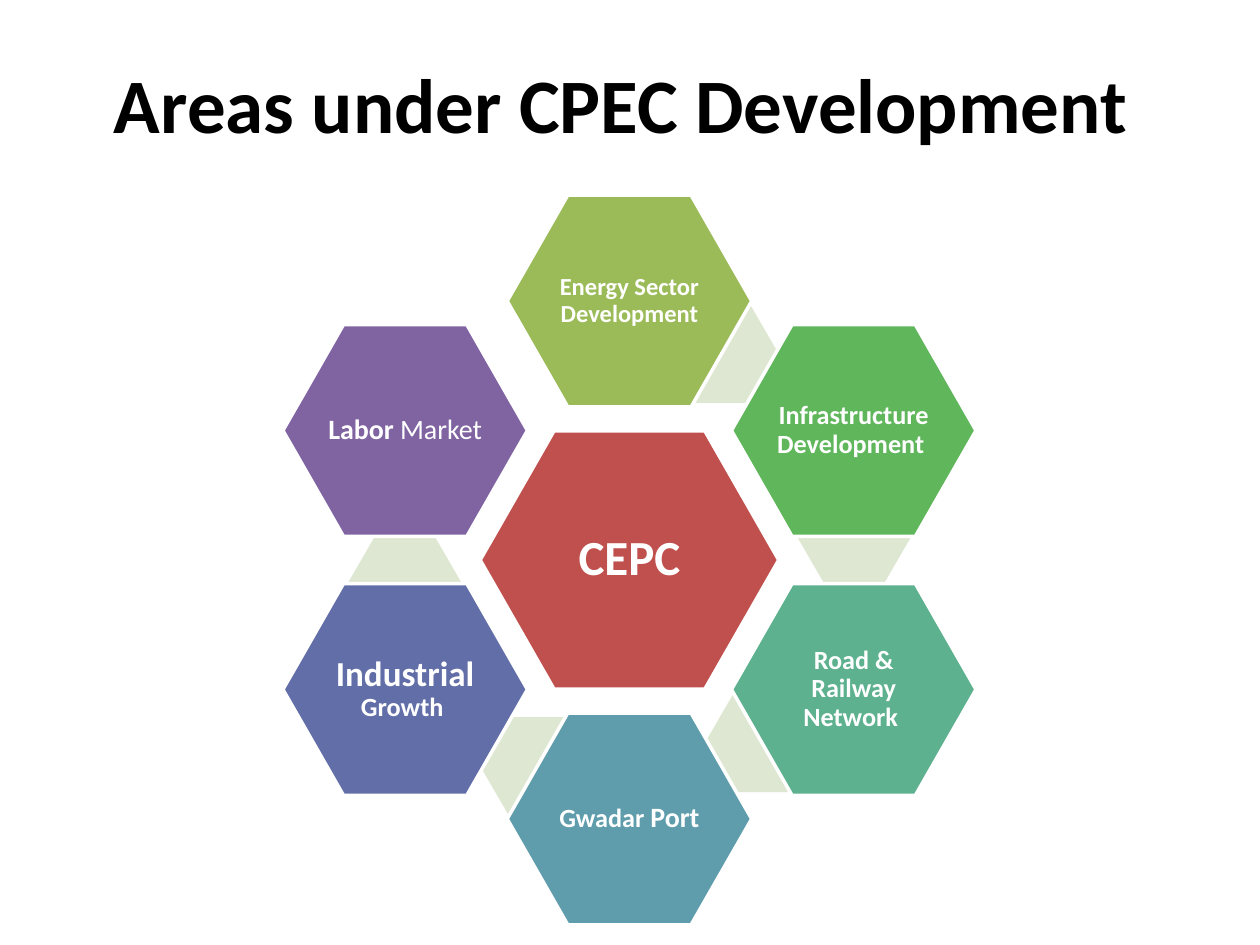
from math import cos, radians, sin

from pptx import Presentation
from pptx.dml.color import RGBColor
from pptx.enum.shapes import MSO_SHAPE
from pptx.enum.text import MSO_ANCHOR, PP_ALIGN
from pptx.util import Cm, Pt

FONT = "Calibri"
BLACK = RGBColor(0x00, 0x00, 0x00)
WHITE = RGBColor(0xFF, 0xFF, 0xFF)
RED = RGBColor(0xC0, 0x50, 0x4D)
PALE = RGBColor(0xDE, 0xE7, 0xD1)

# Runs are (text, size, bold)
TITLE = [("Areas under CPEC Development ", 44, True)]
HUB = [("CEPC", 28, True)]
# Clockwise from the top: fill, runs
AREAS = [
    (RGBColor(0x9B, 0xBB, 0x59), [("Energy Sector Development", 14, True)]),
    (RGBColor(0x5F, 0xB6, 0x5B), [("Infrastructure Development ", 15, True)]),
    (RGBColor(0x5D, 0xB1, 0x8E), [("Road & Railway Network ", 15, True)]),
    (RGBColor(0x5F, 0x9D, 0xAC), [("Gwadar ", 15, True), ("Port", 16, True)]),
    (RGBColor(0x62, 0x6E, 0xA7),
     [("Industrial", 20, True), (" ", 15, False), ("Growth ", 15, True)]),
    (RGBColor(0x80, 0x64, 0xA2),
     [("Labor", 16, True), (" Market ", 16, False)]),
]

# Lengths in cm, angles in degrees clockwise from the top
MID_X, MID_Y = 12.69, 11.29
HUB_SIZE = (6.02, 5.21)
AREA_SIZE = (4.93, 4.27)
LINK_SIZE = (2.26, 1.95)
AREA_RING, LINK_RING = 5.22, 4.55
STEP = 360 / len(AREAS)
LINK_TURN = 24.5


def add_runs(frame, runs, color):
    frame.word_wrap = True
    frame.vertical_anchor = MSO_ANCHOR.MIDDLE
    para = frame.paragraphs[0]
    para.alignment = PP_ALIGN.CENTER
    for text, size, bold in runs:
        run = para.add_run()
        run.text = text
        font = run.font
        font.name, font.size, font.bold = FONT, Pt(size), bold
        font.color.rgb = color
    return para


def add_hex(slide, ring, angle, size, fill, slant):
    """Centre a hexagon on a ring around the hub."""
    wide, high = size
    x = MID_X + ring * sin(radians(angle))
    y = MID_Y - ring * cos(radians(angle))
    shape = slide.shapes.add_shape(
        MSO_SHAPE.HEXAGON, Cm(x - wide / 2), Cm(y - high / 2),
        Cm(wide), Cm(high))
    shape.adjustments[0] = slant
    shape.shadow.inherit = False
    shape.fill.solid()
    shape.fill.fore_color.rgb = fill
    shape.line.fill.background()
    return shape


def add_cell(slide, ring, angle, size, fill, runs, inset):
    """Add a white-edged hexagon with a label."""
    shape = add_hex(slide, ring, angle, size, fill, 0.286)
    shape.line.color.rgb = WHITE
    shape.line.width = Pt(2)
    frame = shape.text_frame
    frame.margin_left = frame.margin_right = Cm(inset)
    frame.margin_top = frame.margin_bottom = Cm(inset)
    add_runs(frame, runs, WHITE).line_spacing = 0.9


def main():
    deck = Presentation()
    deck.slide_width, deck.slide_height = Cm(25.4), Cm(19.05)
    slide = deck.slides.add_slide(deck.slide_layouts[5])

    title = slide.shapes.title
    title.left, title.top = Cm(1.27), Cm(0.76)
    title.width, title.height = Cm(22.86), Cm(2.62)
    add_runs(title.text_frame, TITLE, BLACK)

    add_cell(slide, 0, 0, HUB_SIZE, RED, HUB, 0.1)
    for i, (fill, runs) in enumerate(AREAS):
        angle = i * STEP
        if i < len(AREAS) - 1:
            add_hex(slide, LINK_RING, angle + LINK_TURN, LINK_SIZE, PALE, 0.289)
        add_cell(slide, AREA_RING, angle, AREA_SIZE, fill, runs, 0.05)

    deck.save("out.pptx")


if __name__ == "__main__":
    main()
